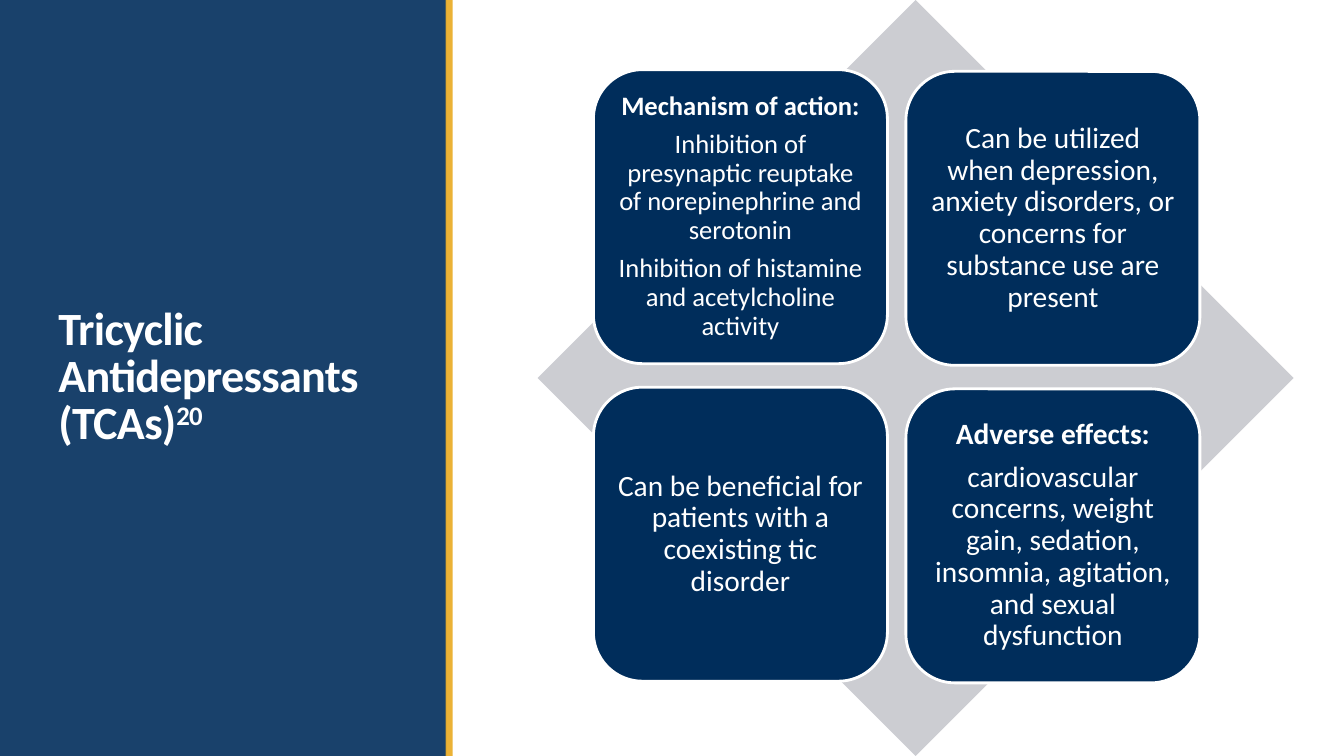
from dataclasses import dataclass

from pptx import Presentation
from pptx.dml.color import RGBColor
from pptx.enum.shapes import MSO_SHAPE as Shape
from pptx.enum.text import MSO_ANCHOR as Anchor, MSO_AUTO_SIZE as AutoSize, PP_ALIGN as Align
from pptx.oxml.ns import qn
from pptx.util import Inches, Length, Pt

NAVY = RGBColor(0x00, 0x2D, 0x5B)
GOLD = RGBColor(0xE9, 0xAA, 0x21)
GREY = RGBColor(0xCC, 0xCD, 0xD2)
WHITE = RGBColor(0xFF, 0xFF, 0xFF)
FONT = "Calibri"

# Grid of 160 columns by 90 rows
ROWS = 90
CARD_SIZE = 35
CARD_LEFT, CARD_TOP = 70.65, 8.3
COL_STEP, ROW_STEP = 37.2, 37.8
RIGHT_DROP = 0.2


@dataclass
class Card:
    col: int
    row: int
    size: int
    body: list[str]
    heading: str = ""
    inset: float = 0.09


CARDS = [
    Card(0, 1, 21, ["Can be beneficial for patients with a coexisting tic disorder"]),
    Card(1, 0, 21, ["Can be utilized when depression, anxiety disorders, or concerns "
                    "for substance use are present"]),
    Card(0, 0, 19, ["Inhibition of presynaptic reuptake of norepinephrine and serotonin",
                    "Inhibition of histamine and acetylcholine activity"],
         "Mechanism of action:", 0.08),
    Card(1, 1, 21, ["cardiovascular concerns, weight gain, sedation, insomnia, agitation, "
                    "and sexual dysfunction"], "Adverse effects:"),
]

prs = Presentation()
prs.slide_width, prs.slide_height = Inches(13.333), Inches(7.5)


def grid(units: float) -> Length:
    return Length(round(prs.slide_height * units / ROWS))


def add_run(p, text: str, *, size: float, bold: bool = False,
            spacing: int = 0, baseline: int = 0) -> None:
    r = p.add_run()
    r.text = text
    r.font.name, r.font.size, r.font.bold = FONT, Pt(size), bold
    r.font.color.rgb = WHITE
    # Letter spacing and superscript
    for name, value in (("spc", spacing), ("baseline", baseline)):
        if value:
            r.font._element.set(name, str(value))


def add_block(s, kind: Shape, left: float, top: float, width: float, height: float,
              color: RGBColor, opacity: int = 100, outlined: bool = False):
    sp = s.shapes.add_shape(kind, grid(left), grid(top), grid(width), grid(height))
    sp.shadow.inherit = False
    sp.fill.solid()
    sp.fill.fore_color.rgb = color
    if opacity < 100:
        rgb = sp.element.spPr.find(".//" + qn("a:srgbClr"))
        rgb.makeelement(qn("a:alpha"), {})
        alpha = rgb.makeelement(qn("a:alpha"), {"val": str(opacity * 1000)})
        rgb.append(alpha)
    if outlined:
        sp.line.color.rgb, sp.line.width = WHITE, Pt(2)
    else:
        sp.line.fill.background()
    return sp


def add_card(s, card: Card) -> None:
    left = CARD_LEFT + card.col * COL_STEP
    top = CARD_TOP + card.row * ROW_STEP + card.col * RIGHT_DROP
    sp = add_block(s, Shape.ROUNDED_RECTANGLE, left, top, CARD_SIZE, CARD_SIZE,
                   NAVY, outlined=True)
    tf = sp.text_frame
    tf.word_wrap, tf.vertical_anchor = True, Anchor.MIDDLE
    tf.margin_left = tf.margin_right = tf.margin_top = tf.margin_bottom = Inches(card.inset)
    lines = [(card.heading, True)] if card.heading else []
    lines += [(text, False) for text in card.body]
    for i, (text, bold) in enumerate(lines):
        p = tf.add_paragraph() if i else tf.paragraphs[0]
        p.alignment, p.line_spacing = Align.CENTER, 0.9
        if i:
            p.space_before = Pt(0.35 * card.size)
        add_run(p, text, size=card.size, bold=bold)


def add_title(s) -> None:
    title = s.shapes.title
    title.left, title.top, title.width, title.height = map(grid, (5.76, 30, 45.36, 30))
    title.element.getparent().append(title.element)  # in front of the side panel
    tf = title.text_frame
    tf.word_wrap, tf.vertical_anchor, tf.auto_size = True, Anchor.MIDDLE, AutoSize.NONE
    p = tf.paragraphs[0]
    p.alignment, p.line_spacing = Align.LEFT, 0.85
    add_run(p, "Tricyclic Antidepressants (TCAs)", size=33, bold=True, spacing=-50)
    add_run(p, "20", size=33, bold=True, spacing=-50, baseline=30000)


def main() -> None:
    s = prs.slides.add_slide(prs.slide_layouts[5])
    # Side panel with its gold edge
    add_block(s, Shape.RECTANGLE, 0, 0, 53.16, ROWS, NAVY, opacity=90)
    add_block(s, Shape.RECTANGLE, 53.04, 0, 0.84, ROWS, GOLD, opacity=90)
    add_title(s)
    # Diamond behind the four cards
    add_block(s, Shape.DIAMOND, 64, 0, ROWS, ROWS, GREY)
    for card in CARDS:
        add_card(s, card)
    prs.save("out.pptx")


if __name__ == "__main__":
    main()
